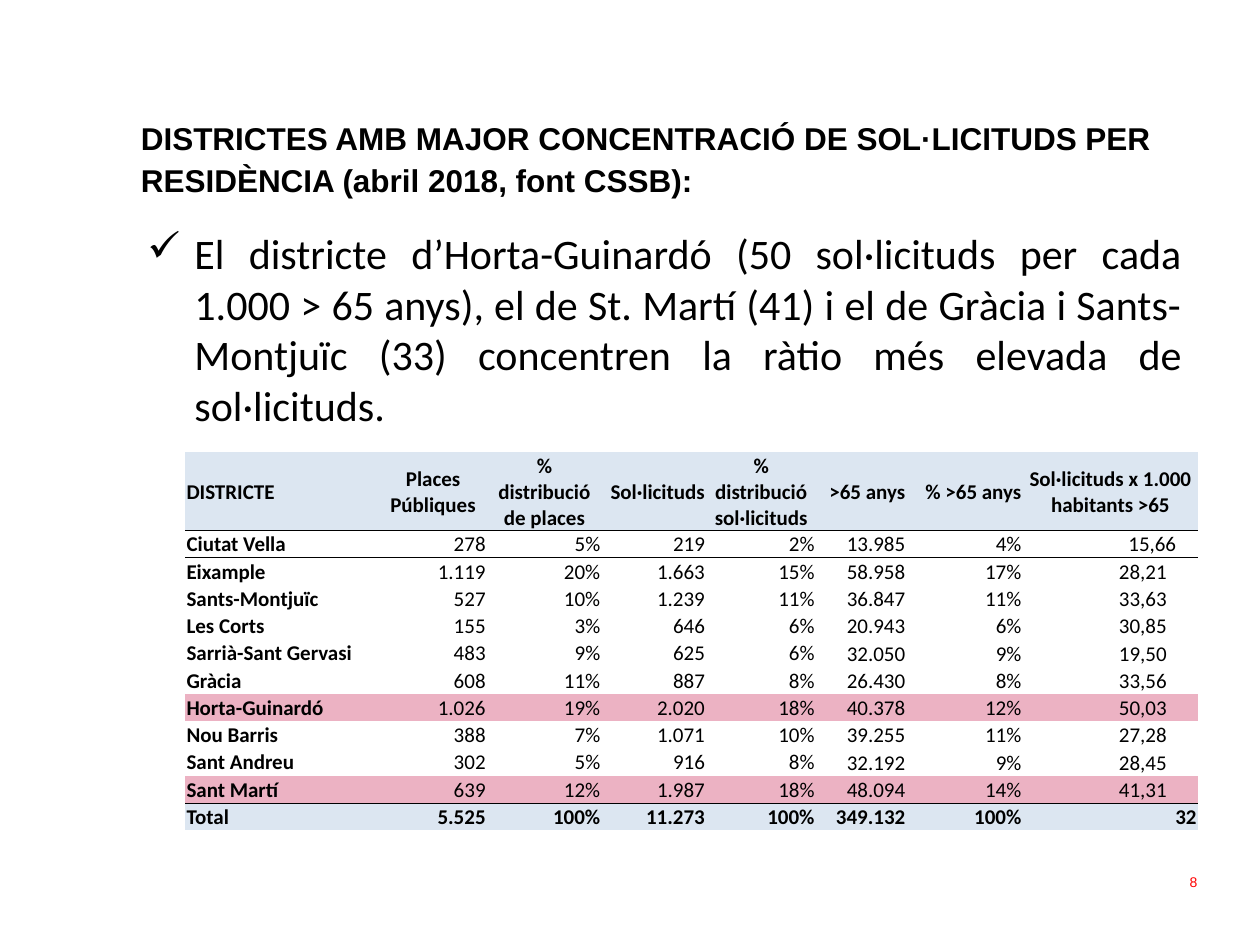
from dataclasses import dataclass

from lxml.etree import SubElement
from pptx import Presentation
from pptx.dml.color import RGBColor
from pptx.enum.text import MSO_ANCHOR, PP_ALIGN
from pptx.oxml import parse_xml
from pptx.oxml.ns import nsdecls, qn
from pptx.util import Cm, Pt


@dataclass(frozen=True)
class Theme:
    heading_font: str = "Arial"
    body_font: str = "Calibri"
    ink: str = "000000"
    page: str = "FF0000"
    band: str = "DCE6F1"
    highlight: str = "ECB2C3"
    title_size: int = 18
    body_size: int = 24
    table_size: int = 12
    page_size: int = 8
    rule: float = 0.5


THEME = Theme()
NO_STYLE = "{2D5ABB26-0587-4C30-8999-92F81FD0307C}"

TITLE = ("DISTRICTES AMB MAJOR CONCENTRACIÓ DE SOL·LICITUDS PER "
         "RESIDÈNCIA (abril 2018, font CSSB):")
FINDING = ("El districte d’Horta-Guinardó (50 sol·licituds per cada 1.000 > 65 anys), "
           "el de St. Martí (41) i el de Gràcia i Sants-Montjuïc (33) concentren la "
           "ràtio més elevada de sol·licituds.")

COL_WIDTHS = [3.91, 2.18, 2.31, 2.11, 2.21, 1.83, 2.34, 3.53]
HEADER_HEIGHT, ROW_HEIGHT = 1.57, 0.55
CENTRED_HEADERS = {1, 2, 4, 7}
HIGHLIGHTED = {"Horta-Guinardó", "Sant Martí"}
ROWS = [
    ["DISTRICTE", "Places Públiques", "% distribució de places", "Sol·licituds",
     "% distribució sol·licituds", ">65 anys", "% >65 anys",
     "Sol·licituds x 1.000 habitants >65"],
    ["Ciutat Vella", "278", "5%", "219", "2%", "13.985", "4%", "15,66"],
    ["Eixample", "1.119", "20%", "1.663", "15%", "58.958", "17%", "28,21"],
    ["Sants-Montjuïc", "527", "10%", "1.239", "11%", "36.847", "11%", "33,63"],
    ["Les Corts", "155", "3%", "646", "6%", "20.943", "6%", "30,85"],
    ["Sarrià-Sant Gervasi", "483", "9%", "625", "6%", "32.050", "9%", "19,50"],
    ["Gràcia", "608", "11%", "887", "8%", "26.430", "8%", "33,56"],
    ["Horta-Guinardó", "1.026", "19%", "2.020", "18%", "40.378", "12%", "50,03"],
    ["Nou Barris", "388", "7%", "1.071", "10%", "39.255", "11%", "27,28"],
    ["Sant Andreu", "302", "5%", "916", "8%", "32.192", "9%", "28,45"],
    ["Sant Martí", "639", "12%", "1.987", "18%", "48.094", "14%", "41,31"],
    ["Total", "5.525", "100%", "11.273", "100%", "349.132", "100%", "32"],
]


def add_run(p, text, font, size, color=THEME.ink, bold=False):
    r = p.add_run()
    r.text = text
    r.font.name = font
    r.font.size = Pt(size)
    r.font.bold = bold
    r.font.color.rgb = RGBColor.from_string(color)


def add_text_box(s, left, top, width, height, anchor):
    tf = s.shapes.add_textbox(Cm(left), Cm(top), Cm(width), Cm(height)).text_frame
    tf.word_wrap = True
    tf.vertical_anchor = anchor
    return tf


def add_title(s):
    tf = add_text_box(s, 2.59, 2.39, 21.46, 2.39, MSO_ANCHOR.MIDDLE)
    tf.margin_top, tf.margin_bottom = 0, Cm(0.86)
    p = tf.paragraphs[0]
    p.line_spacing = Pt(24)
    add_run(p, TITLE, THEME.heading_font, THEME.title_size, bold=True)


def add_finding(s):
    tf = add_text_box(s, 2.72, 4.47, 21.36, 12.57, MSO_ANCHOR.TOP)
    p = tf.paragraphs[0]
    p.alignment = PP_ALIGN.JUSTIFY
    pPr = p._p.get_or_add_pPr()
    pPr.set("marL", str(Cm(0.95)))
    pPr.set("indent", str(-Cm(0.95)))
    SubElement(pPr, qn("a:buChar")).set("char", "✓")
    add_run(p, FINDING, THEME.body_font, THEME.body_size)


def add_page_number(s):
    tf = add_text_box(s, 18.47, 17.27, 5.92, 1.02, MSO_ANCHOR.MIDDLE)
    p = tf.paragraphs[0]
    p.alignment = PP_ALIGN.RIGHT
    add_run(p, "8", THEME.heading_font, THEME.page_size, THEME.page)


def add_rule(cell, side):
    """Draw a thin line on one side of a cell: T or B."""
    cell._tc.get_or_add_tcPr().insert(0, parse_xml(
        f'<a:ln{side} {nsdecls("a")} w="{Pt(THEME.rule)}"><a:solidFill>'
        f'<a:srgbClr val="{THEME.ink}"/></a:solidFill></a:ln{side}>'))


def cell_alignment(row, col):
    if col == 0:
        return PP_ALIGN.LEFT
    if row == 0 and col in CENTRED_HEADERS:
        return PP_ALIGN.CENTER
    return PP_ALIGN.RIGHT


def cell_anchor(row, col):
    if row == 0:
        return MSO_ANCHOR.MIDDLE
    return MSO_ANCHOR.BOTTOM if col >= 5 else MSO_ANCHOR.TOP


def right_margin(row, col):
    """The ratios of the last column stand in from the edge, the first one less."""
    if col < len(COL_WIDTHS) - 1 or row in (0, len(ROWS) - 1):
        return 0.03
    return 0.44 if row == 1 else 0.63


def fill_cell(cell, row, col, text):
    last = len(ROWS) - 1
    cell.margin_left = cell.margin_top = Cm(0.03)
    cell.margin_right, cell.margin_bottom = Cm(right_margin(row, col)), 0
    cell.vertical_anchor = cell_anchor(row, col)
    outer = row in (0, last)
    if outer or ROWS[row][0] in HIGHLIGHTED:
        cell.fill.solid()
        cell.fill.fore_color.rgb = RGBColor.from_string(
            THEME.band if outer else THEME.highlight)
    else:
        cell.fill.background()
    if row in (0, last - 1):
        add_rule(cell, "B")
    if row in (1, last):
        add_rule(cell, "T")
    p = cell.text_frame.paragraphs[0]
    p.alignment = cell_alignment(row, col)
    add_run(p, text, THEME.body_font, THEME.table_size, bold=outer or col == 0)


def add_district_table(s):
    height = HEADER_HEIGHT + ROW_HEIGHT * (len(ROWS) - 1)
    frame = s.shapes.add_table(len(ROWS), len(COL_WIDTHS), Cm(3.73), Cm(9.12),
                               Cm(sum(COL_WIDTHS)), Cm(height))
    table = frame.table
    table.first_row = table.horz_banding = False
    table._tbl.tblPr.find(qn("a:tableStyleId")).text = NO_STYLE
    for column, width in zip(table.columns, COL_WIDTHS):
        column.width = Cm(width)
    for i, values in enumerate(ROWS):
        table.rows[i].height = Cm(ROW_HEIGHT if i else HEADER_HEIGHT)
        for j, text in enumerate(values):
            fill_cell(table.cell(i, j), i, j, text)


def main():
    prs = Presentation()
    prs.slide_width, prs.slide_height = Cm(25.4), Cm(19.05)
    s = prs.slides.add_slide(prs.slide_layouts[6])
    add_title(s)
    add_finding(s)
    add_page_number(s)
    add_district_table(s)
    prs.save("out.pptx")


if __name__ == "__main__":
    main()
